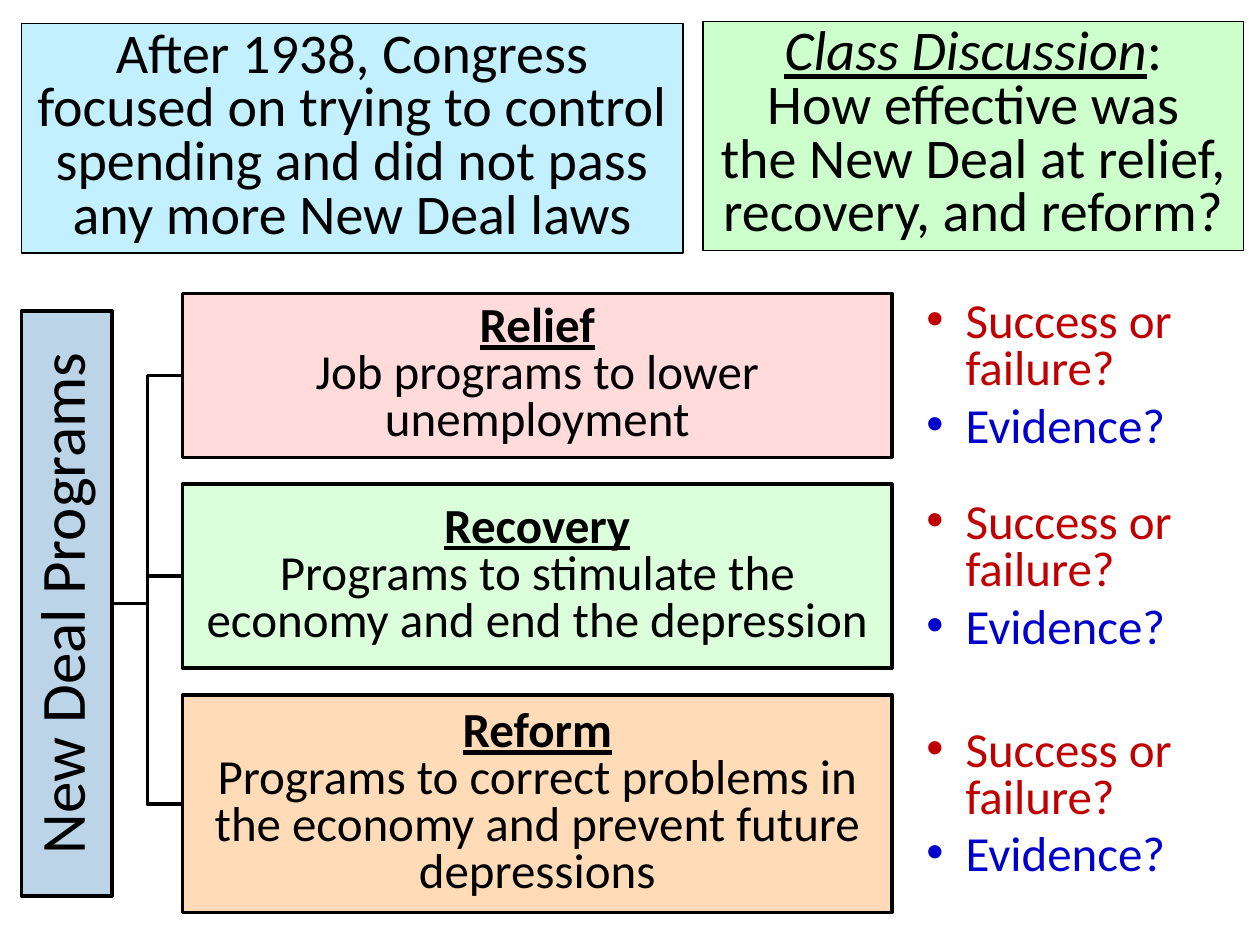
from lxml import etree
from pptx import Presentation
from pptx.dml.color import RGBColor
from pptx.enum.shapes import MSO_CONNECTOR, MSO_SHAPE
from pptx.enum.text import MSO_ANCHOR, MSO_AUTO_SIZE, PP_ALIGN
from pptx.oxml.ns import qn
from pptx.util import Cm, Pt

ELBOW = MSO_CONNECTOR.ELBOW
RECTANGLE = MSO_SHAPE.RECTANGLE
TOP, MIDDLE = MSO_ANCHOR.TOP, MSO_ANCHOR.MIDDLE
FIXED = MSO_AUTO_SIZE.NONE
LEFT, CENTER = PP_ALIGN.LEFT, PP_ALIGN.CENTER

COMPARISON_LAYOUT = 4
GAP = 0.54
PROGRAMS = [
    ("Relief", "Job programs to lower unemployment", "FFCCCC", 3.3),
    ("Recovery", "Programs to stimulate the economy and end the depression", "CCFFCC", 3.71),
    ("Reform", "Programs to correct problems in the economy and prevent future depressions",
     "FFCC99", 4.39),
]
QUESTIONS = [("Success or failure?", "C00000"), ("Evidence?", "0000CC")]


def color(hex_string):
    return RGBColor.from_string(hex_string)


def place(shape, box):
    shape.left, shape.top, shape.width, shape.height = (Cm(length) for length in box)


def paint(shape, fill, line_width, opacity=100):
    shape.fill.solid()
    shape.fill.fore_color.rgb = color(fill)
    shape.line.color.rgb = color("000000")
    shape.line.width = Pt(line_width)
    if opacity < 100:
        tint = shape._element.spPr.find(qn("a:solidFill")).find(qn("a:srgbClr"))
        etree.SubElement(tint, qn("a:alpha"), val=str(opacity * 1000))


def set_frame(shape, anchor, inset=None):
    frame = shape.text_frame
    frame.word_wrap = True
    frame.auto_size = FIXED
    frame.vertical_anchor = anchor
    if inset is not None:
        frame.margin_left = frame.margin_right = Cm(inset)
        frame.margin_top = frame.margin_bottom = Cm(inset)
    return frame


def style(paragraph, size, ink="000000", align=CENTER):
    paragraph.alignment = align
    paragraph.line_spacing = 0.8
    paragraph.space_before = Pt(0)
    paragraph.font.name = "Calibri"
    paragraph.font.size = Pt(size)
    paragraph.font.bold = False
    paragraph.font.color.rgb = color(ink)


def add_run(paragraph, text):
    run = paragraph.add_run()
    run.text = text
    return run


def add_statement(statement, box, fill):
    place(statement, box)
    paint(statement, fill, 0.75)
    paragraph = set_frame(statement, TOP).paragraphs[0]
    style(paragraph, 32)
    return paragraph


def add_discussion(discussion, box):
    paragraph = add_statement(discussion, box, "CCFFCC")
    heading = add_run(paragraph, "Class Discussion")
    heading.font.italic = True
    heading.font.underline = True
    add_run(paragraph, ":")
    for line in ("How effective was", "the New Deal at relief, recovery, and reform?"):
        paragraph.add_line_break()
        add_run(paragraph, line)


def add_panel(slide, box, fill, opacity, inset, size):
    panel = slide.shapes.add_shape(RECTANGLE, *(Cm(length) for length in box))
    panel.shadow.inherit = False
    paint(panel, fill, 2, opacity)
    paragraph = set_frame(panel, MIDDLE, inset).paragraphs[0]
    style(paragraph, size)
    return panel, paragraph


def add_root(slide, box):
    left, top, width, height = box
    shift = (height - width) / 2
    turned_box = (left - shift, top + shift, height, width)
    root, paragraph = add_panel(slide, turned_box, "AACAE2", 80, 0.08, 36)
    root.rotation = 270
    add_run(paragraph, "New Deal Programs")


def add_program(slide, box, name, description, fill):
    paragraph = add_panel(slide, box, fill, 70, 0.05, 28)[1]
    heading = add_run(paragraph, name)
    heading.font.bold = True
    heading.font.underline = True
    paragraph.add_line_break()
    add_run(paragraph, description)


def add_branch(slide, start, end):
    branch = slide.shapes.add_connector(ELBOW, *(Cm(length) for length in start + end))
    branch.line.color.rgb = color("000000")
    branch.line.width = Pt(2)
    etree.SubElement(branch._element.spPr, qn("a:effectLst"))


def add_questions(questions, box):
    place(questions, box)
    frame = set_frame(questions, TOP)
    for index, (question, ink) in enumerate(QUESTIONS):
        paragraph = frame.add_paragraph() if index else frame.paragraphs[0]
        properties = paragraph._p.get_or_add_pPr()
        properties.set("marL", str(Cm(0.79)))
        properties.set("indent", str(-Cm(0.79)))
        etree.SubElement(properties, qn("a:buFont"), typeface="Arial")
        etree.SubElement(properties, qn("a:buChar"), char="•")
        style(paragraph, 28, ink, LEFT)
        paragraph.space_after = Pt(6)
        add_run(paragraph, question)


def add_program_tree(slide, box, question_lists):
    left, top, width, _ = box
    root_top, root_width, root_height = top + 0.35, 1.83, 11.79
    program_left, program_width = left + 3.25, 14.3
    list_left, list_height = left + 17.99, 3.35
    fork = (left + root_width, root_top + root_height / 2)
    for (name, description, fill, height), questions in zip(PROGRAMS, question_lists):
        middle = top + height / 2
        add_branch(slide, fork, (program_left, middle))
        add_program(slide, (program_left, top, program_width, height), name, description, fill)
        list_top = middle - list_height / 2 + 0.05
        add_questions(questions, (list_left, list_top, left + width - list_left, list_height))
        top += height + GAP
    add_root(slide, (left, root_top, root_width, root_height))


def main():
    presentation = Presentation()
    presentation.slide_width, presentation.slide_height = Cm(25.4), Cm(19.05)
    slide = presentation.slides.add_slide(presentation.slide_layouts[COMPARISON_LAYOUT])
    title, discussion, *question_lists = slide.placeholders
    congress = add_statement(title, (0.43, 0.48, 13.34, 4.62), "C2F0FF")
    add_run(congress, "After 1938, Congress focused on trying to control spending "
                      "and did not pass any more New Deal laws")
    add_discussion(discussion, (14.17, 0.43, 10.9, 4.62))
    add_program_tree(slide, (0.43, 5.92, 24.64, 12.48), question_lists)
    presentation.save("out.pptx")


if __name__ == "__main__":
    main()
